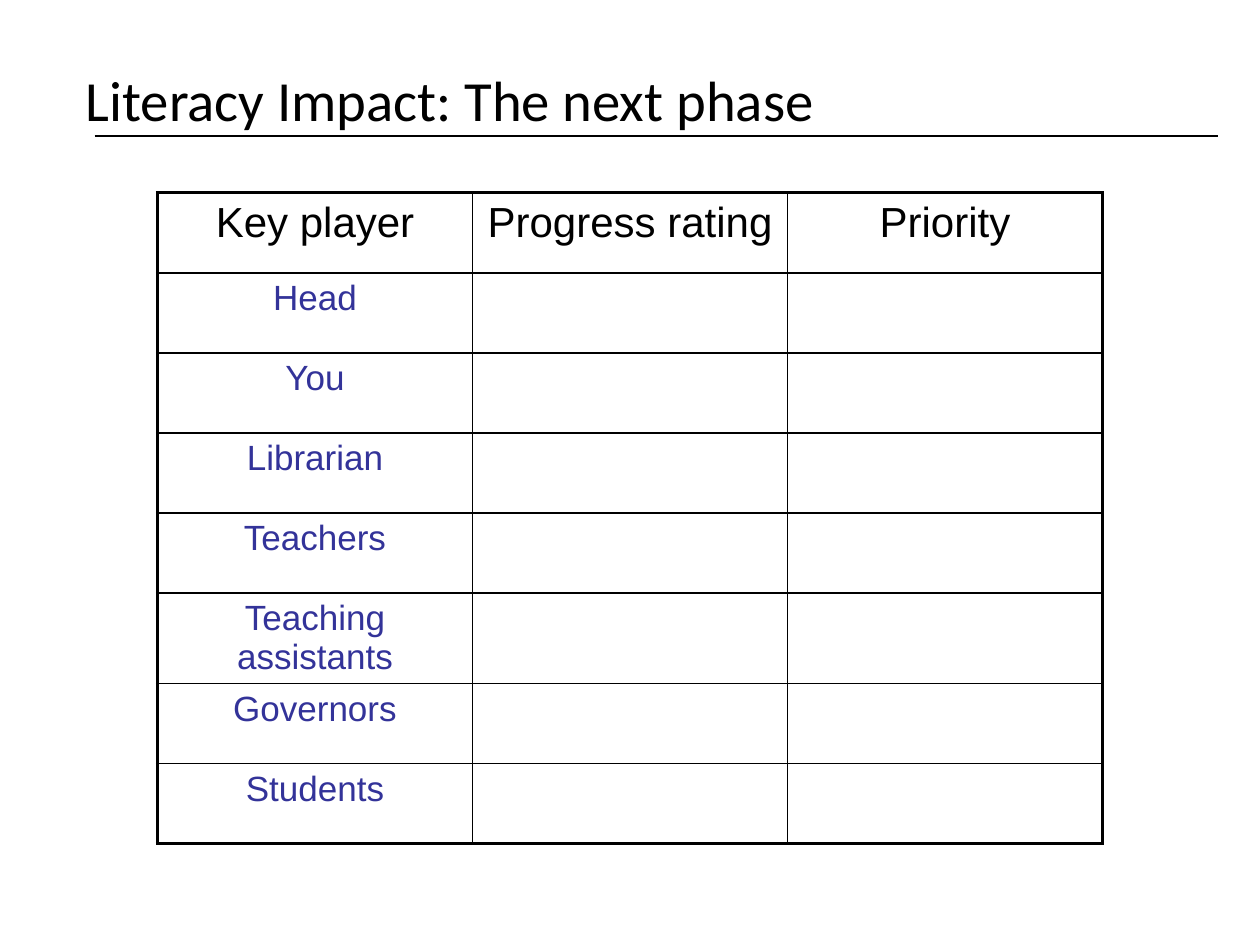
from dataclasses import dataclass

from lxml import etree
from pptx import Presentation
from pptx.dml.color import RGBColor
from pptx.enum.shapes import MSO_CONNECTOR
from pptx.enum.text import MSO_ANCHOR, MSO_AUTO_SIZE, PP_ALIGN
from pptx.oxml.ns import qn
from pptx.util import Inches, Pt

STRAIGHT = MSO_CONNECTOR.STRAIGHT
MIDDLE = MSO_ANCHOR.MIDDLE
TOP = MSO_ANCHOR.TOP
FIXED_SIZE = MSO_AUTO_SIZE.NONE
LEFT = PP_ALIGN.LEFT
CENTER = PP_ALIGN.CENTER

TITLE_ONLY = 5
SLIDE_WIDTH = Inches(10)
SLIDE_HEIGHT = Inches(7.5)

TITLE = "Literacy Impact: The next phase"
HEADINGS = ["Key player", "Progress rating", "Priority"]
PLAYERS = [
    "Head",
    "You",
    "Librarian",
    "Teachers",
    "Teaching assistants",
    "Governors",
    "Students",
]


@dataclass(frozen=True)
class Theme:
    ink: str = "000000"
    accent: str = "333399"
    paper: str = "FFFFFF"
    title_font: str = "Calibri"
    table_font: str = "Arial"
    title_size: float = 32.4
    heading_size: float = 24
    player_size: float = 20
    rule_width: float = 0.75
    inner_border: float = 1
    outer_border: float = 2.25


class SlideBuilder:
    def __init__(self, presentation, theme):
        self.theme = theme
        self.width = presentation.slide_width
        self.height = presentation.slide_height
        layout = presentation.slide_layouts[TITLE_ONLY]
        self.slide = presentation.slides.add_slide(layout)
        background = self.slide.background.fill
        background.solid()
        background.fore_color.rgb = RGBColor.from_string(theme.paper)

    def across(self, share):
        return round(self.width * share)

    def down(self, share):
        return round(self.height * share)

    def add_text(self, paragraph, text, font_name, size, color, alignment):
        paragraph.alignment = alignment
        run = paragraph.add_run()
        run.text = text
        run.font.name = font_name
        run.font.size = Pt(size)
        run.font.color.rgb = RGBColor.from_string(color)

    def title(self, text, left, top, width, height):
        shape = self.slide.shapes.title
        shape.left, shape.top = self.across(left), self.down(top)
        shape.width, shape.height = self.across(width), self.down(height)
        frame = shape.text_frame
        frame.word_wrap = True
        frame.auto_size = FIXED_SIZE
        frame.vertical_anchor = MIDDLE
        theme = self.theme
        self.add_text(frame.paragraphs[0], text, theme.title_font,
                      theme.title_size, theme.ink, LEFT)

    def rule(self, left, right, top):
        y = self.down(top)
        connector = self.slide.shapes.add_connector(
            STRAIGHT, self.across(left), y, self.across(right), y)
        connector.line.color.rgb = RGBColor.from_string(self.theme.ink)
        connector.line.width = Pt(self.theme.rule_width)
        properties = connector._element.spPr
        etree.SubElement(properties, qn("a:effectLst"))

    def border(self, cell, outer_sides):
        properties = cell._tc.get_or_add_tcPr()
        for position, side in enumerate("LRTB"):
            width = (self.theme.outer_border if side in outer_sides
                     else self.theme.inner_border)
            line = etree.Element(qn(f"a:ln{side}"), w=str(Pt(width)))
            fill = etree.SubElement(line, qn("a:solidFill"))
            etree.SubElement(fill, qn("a:srgbClr"), val=self.theme.ink)
            properties.insert(position, line)

    def table(self, headings, players, left, top, width, row_height):
        theme = self.theme
        rows = [headings] + [[player, "", ""] for player in players]
        last_row, last_column = len(rows) - 1, len(headings) - 1
        frame = self.slide.shapes.add_table(
            len(rows), len(headings), self.across(left), self.down(top),
            self.across(width), self.down(row_height * len(rows)))
        for row_index, row in enumerate(rows):
            is_heading = row_index == 0
            size = theme.heading_size if is_heading else theme.player_size
            color = theme.ink if is_heading else theme.accent
            for column_index, text in enumerate(row):
                cell = frame.table.cell(row_index, column_index)
                cell.fill.background()
                cell.vertical_anchor = TOP
                edges = {"L": column_index == 0,
                         "R": column_index == last_column,
                         "T": is_heading,
                         "B": row_index == last_row}
                self.border(cell, [side for side in edges if edges[side]])
                paragraph = cell.text_frame.paragraphs[0]
                if text:
                    self.add_text(paragraph, text, theme.table_font,
                                  size, color, CENTER)


def main():
    presentation = Presentation()
    presentation.slide_width = SLIDE_WIDTH
    presentation.slide_height = SLIDE_HEIGHT
    builder = SlideBuilder(presentation, Theme())
    builder.title(TITLE, left=0.058, top=0.07, width=0.81, height=0.07)
    builder.rule(left=0.075, right=0.967, top=0.144)
    builder.table(HEADINGS, PLAYERS, left=0.125, top=0.204,
                  width=0.75, row_height=0.0847)
    presentation.save("out.pptx")


if __name__ == "__main__":
    main()
